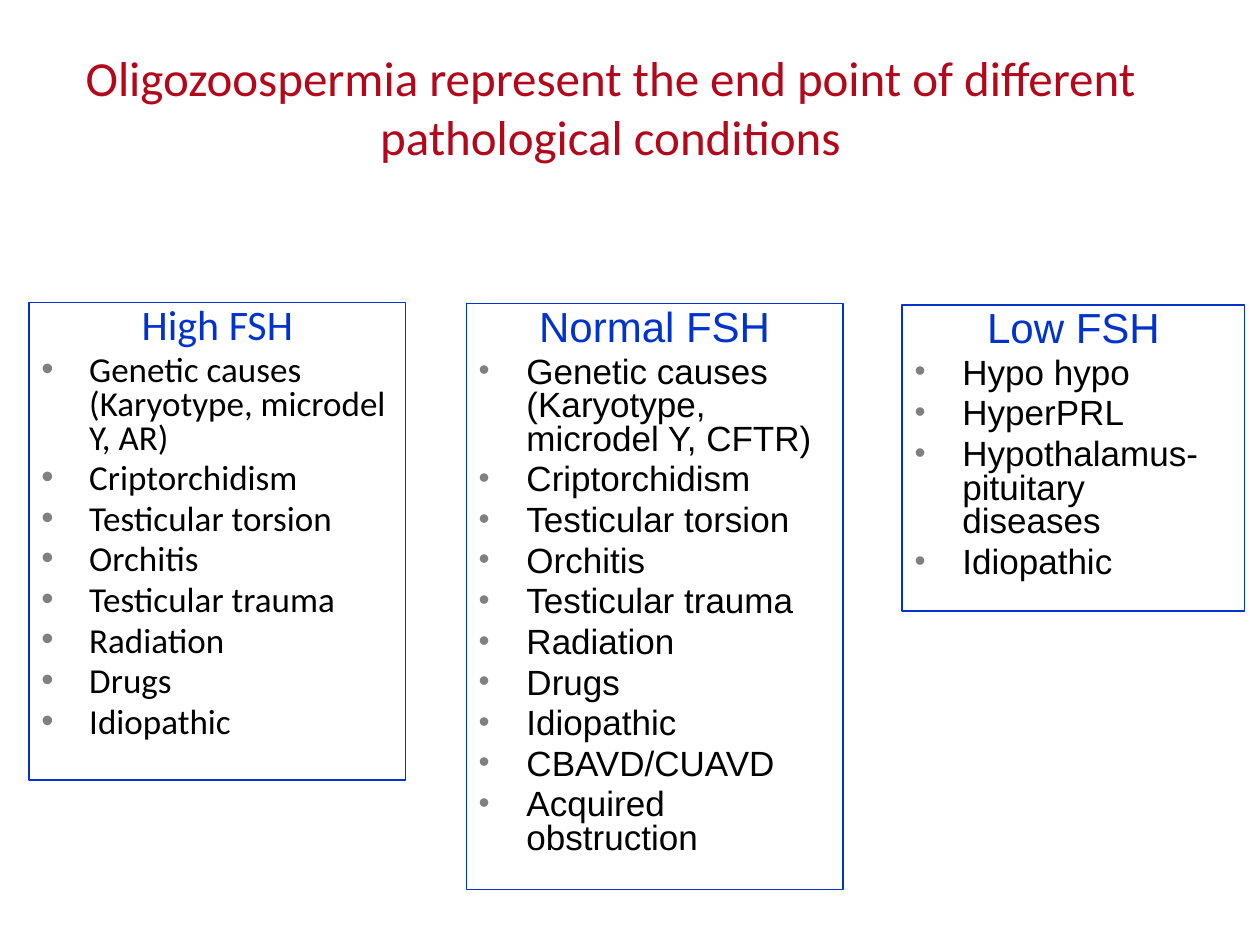
from dataclasses import dataclass

from lxml import etree
from pptx import Presentation
from pptx.dml.color import RGBColor
from pptx.enum.shapes import MSO_SHAPE
from pptx.enum.text import MSO_ANCHOR, PP_ALIGN
from pptx.oxml.ns import qn
from pptx.util import Inches, Pt

RECTANGLE = MSO_SHAPE.RECTANGLE
TOP, MIDDLE = MSO_ANCHOR.TOP, MSO_ANCHOR.MIDDLE
LEFT, CENTER = PP_ALIGN.LEFT, PP_ALIGN.CENTER


@dataclass(frozen=True)
class Theme:
    """Colours, fonts and type sizes of the slide."""
    title_color: RGBColor = RGBColor(0xB3, 0x07, 0x1B)
    accent: RGBColor = RGBColor(0x00, 0x33, 0xCC)
    body_color: RGBColor = RGBColor(0, 0, 0)
    panel: RGBColor = RGBColor(0xFF, 0xFF, 0xFF)
    bullet: str = "808080"
    calibri: str = "Calibri"
    arial: str = "Arial"
    title_size: int = 28
    heading_size: int = 24
    cause_size: int = 20


THEME = Theme()
TITLE = "Oligozoospermia represent the end point of different pathological conditions"
SHARED_CAUSES = ["Criptorchidism", "Testicular torsion", "Orchitis",
                 "Testicular trauma", "Radiation", "Drugs", "Idiopathic"]
GROUPS = [
    ("High FSH", (0.23, 2.4, 2.99, 3.79), THEME.calibri, 100,
     ["Genetic causes (Karyotype, microdel Y, AR)", *SHARED_CAUSES]),
    ("Normal FSH", (3.7, 2.41, 2.99, 4.65), THEME.arial, 90,
     ["Genetic causes (Karyotype, microdel Y, CFTR)", *SHARED_CAUSES,
      "CBAVD/CUAVD", "Acquired obstruction"]),
    ("Low FSH", (7.16, 2.42, 2.72, 2.43), THEME.arial, 90,
     ["Hypo hypo", "HyperPRL", "Hypothalamus-pituitary diseases", "Idiopathic"]),
]


def apply_format(target, values):
    """Set each named attribute on the target."""
    for name, value in values.items():
        setattr(target, name, value)


def write_paragraph(paragraph, text, font, size, color, **layout):
    """Fill a paragraph with text in one font."""
    apply_format(paragraph, layout)
    paragraph.text = text
    apply_format(paragraph.font, {"name": font, "size": Pt(size)})
    paragraph.font.color.rgb = color


def add_bullet(paragraph, size_percent):
    """Give a paragraph a grey bullet with a hanging indent."""
    properties = paragraph._p.get_or_add_pPr()
    properties.set("marL", str(Inches(0.38)))
    properties.set("indent", str(-Inches(0.38)))
    color = etree.SubElement(properties, qn("a:buClr"))
    etree.SubElement(color, qn("a:srgbClr"), val=THEME.bullet)
    etree.SubElement(properties, qn("a:buSzPct"), val=str(size_percent * 1000))
    etree.SubElement(properties, qn("a:buFont"), typeface=THEME.arial)
    etree.SubElement(properties, qn("a:buChar"), char="•")


def add_title(slide):
    """Add the centred slide title."""
    box = slide.shapes.add_textbox(*map(Inches, (0.43, 0.06, 8.83, 1.57)))
    apply_format(box.text_frame, {"word_wrap": True, "vertical_anchor": MIDDLE})
    write_paragraph(box.text_frame.paragraphs[0], TITLE, THEME.calibri,
                    THEME.title_size, THEME.title_color, alignment=CENTER)


def add_group(slide, heading, bounds, font, bullet_size, causes):
    """Add a bordered panel with a heading and its bulleted causes."""
    panel = slide.shapes.add_shape(RECTANGLE, *map(Inches, bounds))
    panel.shadow.inherit = False
    panel.fill.solid()
    panel.fill.fore_color.rgb = THEME.panel
    panel.line.color.rgb = THEME.accent
    panel.line.width = Pt(0.75)
    frame = panel.text_frame
    apply_format(frame, {"word_wrap": True, "vertical_anchor": TOP})
    write_paragraph(frame.paragraphs[0], heading, font, THEME.heading_size,
                    THEME.accent, alignment=CENTER, line_spacing=0.8)
    for cause in causes:
        paragraph = frame.add_paragraph()
        apply_format(paragraph, {"line_spacing": 0.8, "space_before": Pt(4)})
        add_bullet(paragraph, bullet_size)
        write_paragraph(paragraph, cause, font, THEME.cause_size,
                        THEME.body_color, alignment=LEFT)


def main():
    """Build and save the slide."""
    presentation = Presentation()
    apply_format(presentation, {"slide_width": Inches(10), "slide_height": Inches(7.5)})
    slide = presentation.slides.add_slide(presentation.slide_layouts[6])
    add_title(slide)
    for group in GROUPS:
        add_group(slide, *group)
    presentation.save("out.pptx")


if __name__ == "__main__":
    main()
